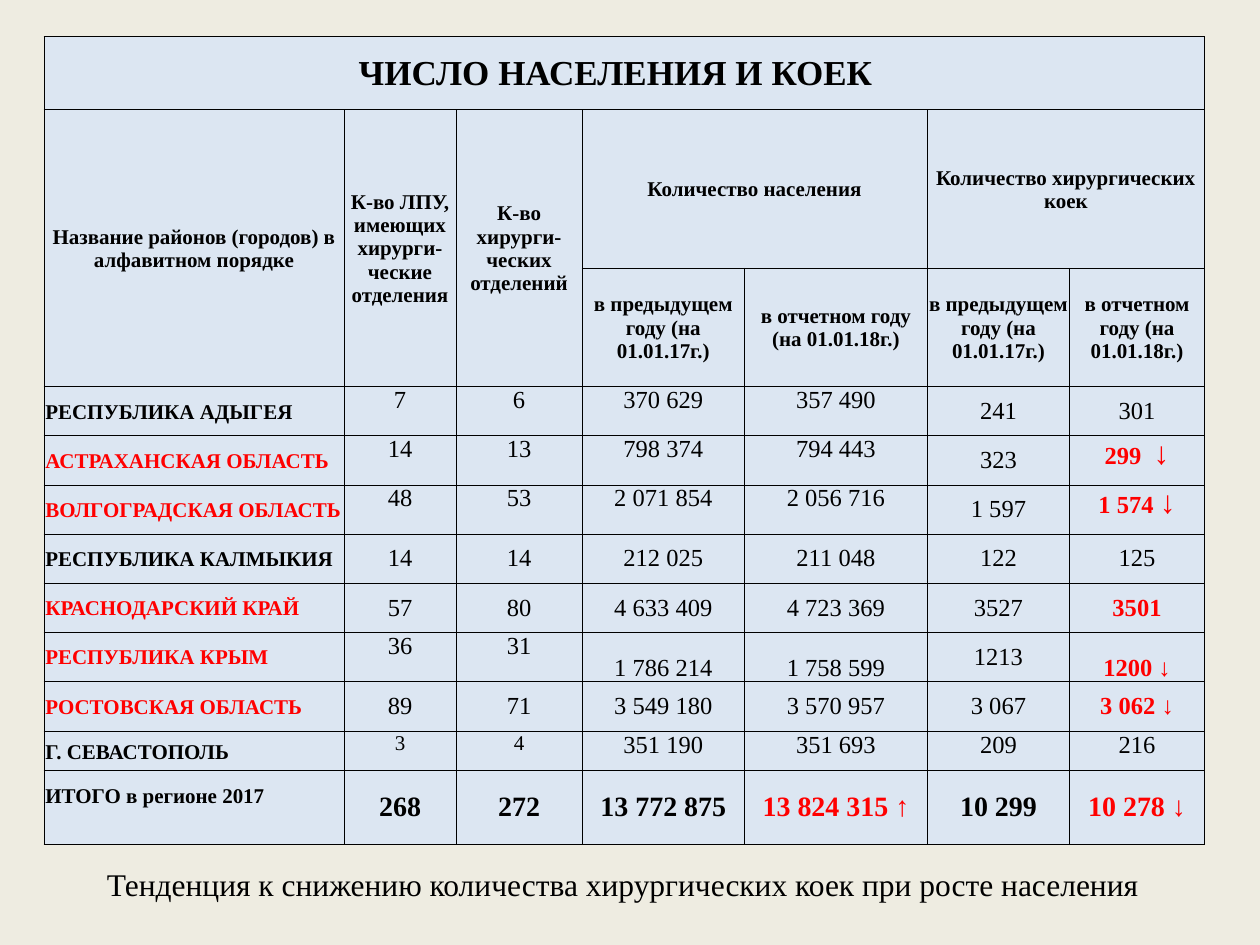
from lxml import etree
from pptx import Presentation
from pptx.dml.color import RGBColor
from pptx.enum import text
from pptx.oxml.ns import qn
from pptx.util import Inches, Pt

FONT = "Times New Roman"
BLACK, RED, CELL, PAGE = "000000", "FF0000", "DCE6F2", "EEECE1"
ANCHORS = {"t": text.MSO_ANCHOR.TOP, "m": text.MSO_ANCHOR.MIDDLE, "b": text.MSO_ANCHOR.BOTTOM}

COLS = [2.38, 0.89, 1, 1.29, 1.45, 1.13, 1.07]
ROWS = [0.58, 1.26, 0.94] + [0.39] * 6 + [0.4, 0.31, 0.58]

TITLE = "ЧИСЛО НАСЕЛЕНИЯ И КОЕК"
PREVIOUS = "в предыдущем году (на 01.01.17г.)"
CURRENT = "в отчетном году (на 01.01.18г.)"
# row, column, rows spanned, columns spanned, wording
HEADERS = [
    (1, 0, 2, 1, "Название районов (городов) в алфавитном порядке"),
    (1, 1, 2, 1, "К-во ЛПУ, имеющих хирурги-ческие отделения"),
    (1, 2, 2, 1, "К-во хирурги-ческих отделений"),
    (1, 3, 1, 2, "Количество населения"),
    (1, 5, 1, 2, "Количество хирургических коек"),
    (2, 3, 1, 1, PREVIOUS),
    (2, 4, 1, 1, CURRENT),
    (2, 5, 1, 1, PREVIOUS),
    (2, 6, 1, 1, CURRENT),
]
# name, fewer beds than last year, anchors of the values, values (a pair is a figure and a large arrow)
REGIONS = [
    ("РЕСПУБЛИКА АДЫГЕЯ", False, "ttttmm", ["7", "6", "370 629", "357 490", "241", "301"]),
    ("АСТРАХАНСКАЯ ОБЛАСТЬ", True, "ttttmt",
     ["14", "13", "798 374", "794 443", "323", ("299  ", "↓")]),
    ("ВОЛГОГРАДСКАЯ ОБЛАСТЬ", True, "ttttmt",
     ["48", "53", "2 071 854", "2 056 716", "1 597", ("1 574 ", "↓")]),
    ("РЕСПУБЛИКА КАЛМЫКИЯ", False, "mmmmmm", ["14", "14", "212 025", "211 048", "122", "125"]),
    ("КРАСНОДАРСКИЙ КРАЙ", True, "mmmmmm",
     ["57", "80", "4 633 409", "4 723 369", "3527", "3501"]),
    ("РЕСПУБЛИКА КРЫМ", True, "ttbbmb",
     ["36", "31", "1 786 214", "1 758 599", "1213", "1200 ↓"]),
    ("РОСТОВСКАЯ ОБЛАСТЬ", True, "mmmmmm",
     ["89", "71", "3 549 180", "3 570 957", "3 067", "3 062 ↓"]),
    ("Г. СЕВАСТОПОЛЬ", False, "tttttt", ["3", "4", "351 190", "351 693", "209", "216"]),
]
TOTAL_NAME = "ИТОГО в регионе 2017"
TOTALS = ["268", "272", "13 772 875", "13 824 315 ↑", "10 299", "10 278 ↓"]
CONCLUSION = "Тенденция к снижению количества хирургических коек при росте населения"

LABEL_INSETS = (0.01, 0.01, 0.01, 0)
VALUE_INSETS = (0.07, 0, 0.07, 0)


def rgb(color):
    return RGBColor.from_string(color)


def set_font(font, size, bold=False, color=BLACK):
    font.name, font.size, font.bold = FONT, Pt(size), bold
    font.color.rgb = rgb(color)


def add_borders(cell):
    tc_pr = cell._tc.get_or_add_tcPr()
    for i, side in enumerate(("a:lnL", "a:lnR", "a:lnT", "a:lnB")):
        ln = etree.Element(qn(side), w=str(Pt(0.5)))
        fill = etree.SubElement(ln, qn("a:solidFill"))
        etree.SubElement(fill, qn("a:srgbClr"), val=BLACK)
        tc_pr.insert(i, ln)


def write(cell, wording, size, bold=True, color=BLACK, anchor="m", insets=LABEL_INSETS, centred=True):
    cell.margin_left, cell.margin_top, cell.margin_right, cell.margin_bottom = map(Inches, insets)
    cell.vertical_anchor = ANCHORS[anchor]
    p = cell.text_frame.paragraphs[0]
    p.alignment = text.PP_ALIGN.CENTER if centred else text.PP_ALIGN.LEFT
    figure, *arrow = wording if isinstance(wording, tuple) else (wording,)
    for part, part_size in [(figure, size)] + [(a, 18) for a in arrow]:
        r = p.add_run()
        r.text = part
        set_font(r.font, part_size, bold, color)


def fill_table(table):
    for i, width in enumerate(COLS):
        table.columns[i].width = Inches(width)
    for i, height in enumerate(ROWS):
        table.rows[i].height = Inches(height)
    for cell in table.iter_cells():
        cell.fill.solid()
        cell.fill.fore_color.rgb = rgb(CELL)
        add_borders(cell)

    table.cell(0, 0).merge(table.cell(0, len(COLS) - 1))
    write(table.cell(0, 0), TITLE, 20, insets=(0.01, 0.01, 0.15, 0))
    for row, col, down, across, wording in HEADERS:
        cell = table.cell(row, col)
        if down * across > 1:
            cell.merge(table.cell(row + down - 1, col + across - 1))
        write(cell, wording, 12)

    for row, (name, falls, anchors, values) in enumerate(REGIONS, 3):
        write(table.cell(row, 0), name, 12, color=RED if falls else BLACK, centred=False)
        for col, (value, anchor) in enumerate(zip(values, anchors), 1):
            marked = falls and col == len(values)
            size = 12 if value in ("3", "4") else 14
            write(table.cell(row, col), value, size, marked, RED if marked else BLACK,
                  anchor, VALUE_INSETS)

    last = len(ROWS) - 1
    write(table.cell(last, 0), TOTAL_NAME, 12, insets=(0.01, 0.01, 0.01, 0.19), centred=False)
    for col, value in enumerate(TOTALS, 1):
        color = RED if value[-1] in "↑↓" else BLACK
        write(table.cell(last, col), value, 16, color=color, insets=VALUE_INSETS)


def main():
    prs = Presentation()
    prs.slide_width, prs.slide_height = Inches(10), Inches(7.5)
    s = prs.slides.add_slide(prs.slide_layouts[6])
    s.background.fill.solid()
    s.background.fill.fore_color.rgb = rgb(PAGE)

    frame = s.shapes.add_table(len(ROWS), len(COLS), Inches(0.35), Inches(0.29),
                               Inches(sum(COLS)), Inches(sum(ROWS)))
    frame.table.first_row = frame.table.horz_banding = False
    fill_table(frame.table)

    tf = s.shapes.add_textbox(Inches(0.75), Inches(6.82), Inches(8.9), Inches(0.4)).text_frame
    tf.word_wrap = True
    tf.auto_size = text.MSO_AUTO_SIZE.SHAPE_TO_FIT_TEXT
    p = tf.paragraphs[0]
    p.text = CONCLUSION
    set_font(p.font, 18)
    prs.save("out.pptx")


if __name__ == "__main__":
    main()
